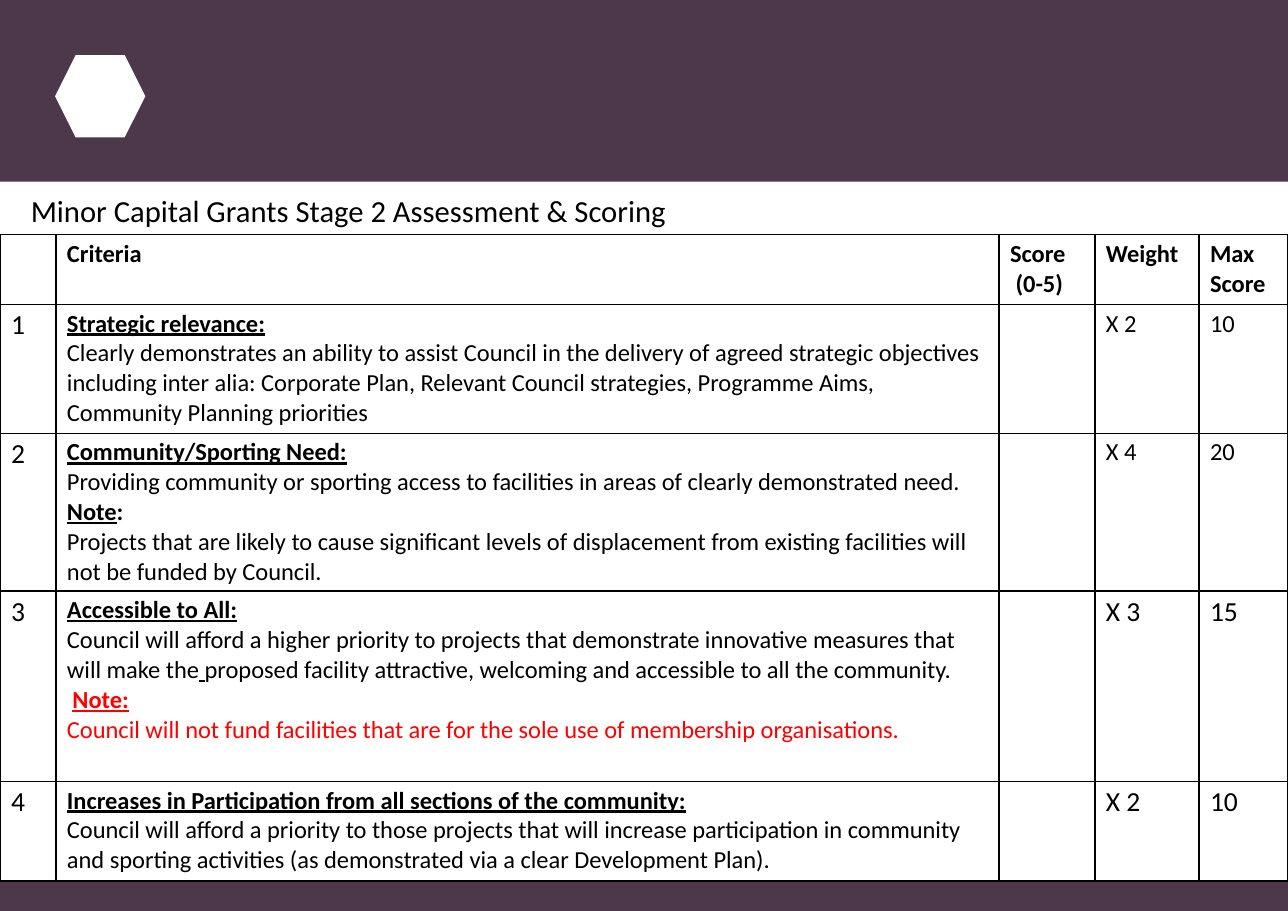
from lxml.etree import SubElement
from pptx import Presentation
from pptx.dml.color import RGBColor
from pptx.enum.shapes import MSO_SHAPE
from pptx.oxml.ns import qn
from pptx.util import Cm, Pt

PLUM = RGBColor(0x4C, 0x37, 0x4B)
WHITE = RGBColor(0xFF, 0xFF, 0xFF)
BLACK = RGBColor(0, 0, 0)
RED = RGBColor(0xFF, 0, 0)
FONT = "Calibri"
SLIDE_WIDTH, SLIDE_HEIGHT = 29.69, 21.01

COLUMN_WIDTHS = [1.29, 21.74, 2.21, 2.4, 2.05]
ROW_HEIGHTS = [1.61, 2.97, 3.64, 4.39, 2.3]

# Run styles: (bold, underline, colour)
PLAIN = (False, False, BLACK)
BOLD = (True, False, BLACK)
HEADING = (True, True, BLACK)
LINKED = (False, True, BLACK)
RED_PLAIN = (False, False, RED)
RED_HEADING = (True, True, RED)

HEADER = [[], ["Criteria"], ["Score", " (0-5)"], ["Weight"], ["Max Score"]]

# Each criterion: paragraphs of (text, style) runs, weight, maximum score, size of the scores
CRITERIA = [
    ([[("Strategic relevance:", HEADING)],
      [("Clearly demonstrates an ability to assist Council in the delivery of agreed "
        "strategic objectives including inter alia: Corporate Plan, Relevant Council "
        "strategies, Programme Aims, Community Planning priorities", PLAIN)]],
     "X 2", "10", 16),
    ([[("Community/Sporting Need:", HEADING)],
      [("Providing community or sporting access to facilities in areas of clearly "
        "demonstrated need.", PLAIN)],
      [("Note", HEADING), (":", BOLD)],
      [("Projects that are likely to cause significant levels of displacement from "
        "existing facilities will not be funded by Council.", PLAIN)]],
     "X 4", "20", 16),
    ([[("Accessible to All:", HEADING)],
      [("Council will afford a higher priority to projects that demonstrate innovative "
        "measures that will make the", PLAIN), (" ", LINKED),
       ("proposed facility attractive, welcoming and accessible to all the community.",
        PLAIN)],
      [(" ", PLAIN), ("Note:", RED_HEADING)],
      [("Council will not fund facilities that are for the sole use of membership "
        "organisations.", RED_PLAIN)]],
     "X 3", "15", 18),
    ([[("Increases in Participation from all sections of the community:", HEADING)],
      [("Council will afford a priority to those projects that will increase "
        "participation in community and sporting activities (as demonstrated via a "
        "clear Development Plan).", PLAIN)]],
     "X 2", "10", 18),
]


def style_font(font, style):
    font.bold, font.underline, font.color.rgb = style


def write_paragraphs(text_frame, paragraphs, size):
    for index, runs in enumerate(paragraphs):
        paragraph = text_frame.add_paragraph() if index else text_frame.paragraphs[0]
        paragraph.font.name = FONT
        paragraph.font.size = Pt(size)
        if len(runs) == 1:
            style_font(paragraph.font, runs[0][1])
        for text, style in runs:
            run = paragraph.add_run()
            run.text = text
            if len(runs) > 1:
                style_font(run.font, style)


def add_block(slide, preset, colour, left, top, width, height):
    shape = slide.shapes.add_shape(preset, Cm(left), Cm(top), Cm(width), Cm(height))
    shape.shadow.inherit = False
    shape.fill.solid()
    shape.fill.fore_color.rgb = colour
    shape.line.fill.background()


def add_banner(slide, left, top, width, height):
    add_block(slide, MSO_SHAPE.RECTANGLE, PLUM, left, top, width, height)
    # Plain emblem
    add_block(slide, MSO_SHAPE.HEXAGON, WHITE, left + 1.27, top + 1.27, 2.08, 1.9)


def add_footer(slide, left, top, width, height):
    add_block(slide, MSO_SHAPE.RECTANGLE, PLUM, left, top, width, height)


def add_title(slide, left, top, width, height):
    box = slide.shapes.add_textbox(Cm(left), Cm(top), Cm(width), Cm(height))
    box.text_frame.word_wrap = False
    write_paragraphs(box.text_frame,
                     [[("Minor Capital Grants Stage 2 Assessment & Scoring", PLAIN)]], 20)


def fill_cell(cell, paragraphs, size):
    cell.margin_top = cell.margin_bottom = Cm(0.1)
    # Borders come before the fill in the cell properties
    properties = cell._tc.get_or_add_tcPr()
    for side in ("a:lnL", "a:lnR", "a:lnT", "a:lnB"):
        border = SubElement(properties, qn(side), w=str(Pt(1)))
        solid = SubElement(border, qn("a:solidFill"))
        SubElement(solid, qn("a:srgbClr"), val=str(BLACK))
    cell.fill.solid()
    cell.fill.fore_color.rgb = WHITE
    write_paragraphs(cell.text_frame, paragraphs, size)


def add_scoring_table(slide, left, top, width, height):
    table = slide.shapes.add_table(len(ROW_HEIGHTS), len(COLUMN_WIDTHS), Cm(left), Cm(top),
                                   Cm(width), Cm(height)).table
    table.first_row = table.horz_banding = False
    for column, column_width in zip(table.columns, COLUMN_WIDTHS):
        column.width = Cm(column_width)
    for row, row_height in zip(table.rows, ROW_HEIGHTS):
        row.height = Cm(row_height)

    # Header row
    for column, lines in enumerate(HEADER):
        fill_cell(table.cell(0, column), [[(line, BOLD)] for line in lines], 16)

    # One row for each criterion, with the score left open
    for number, (description, weight, maximum, size) in enumerate(CRITERIA, 1):
        fill_cell(table.cell(number, 0), [[(str(number), PLAIN)]], 18)
        fill_cell(table.cell(number, 1), description, 16)
        fill_cell(table.cell(number, 2), [], 16)
        fill_cell(table.cell(number, 3), [[(weight, PLAIN)]], size)
        fill_cell(table.cell(number, 4), [[(maximum, PLAIN)]], size)


def main():
    presentation = Presentation()
    presentation.slide_width = Cm(SLIDE_WIDTH)
    presentation.slide_height = Cm(SLIDE_HEIGHT)
    slide = presentation.slides.add_slide(presentation.slide_layouts[6])
    add_banner(slide, 0, 0, SLIDE_WIDTH, 4.19)
    add_footer(slide, 0, 19.49, SLIDE_WIDTH, SLIDE_HEIGHT - 19.49)
    add_title(slide, 0.46, 4.29, 15.32, 1.12)
    add_scoring_table(slide, 0, 5.41, sum(COLUMN_WIDTHS), sum(ROW_HEIGHTS))
    presentation.save("out.pptx")


if __name__ == "__main__":
    main()
